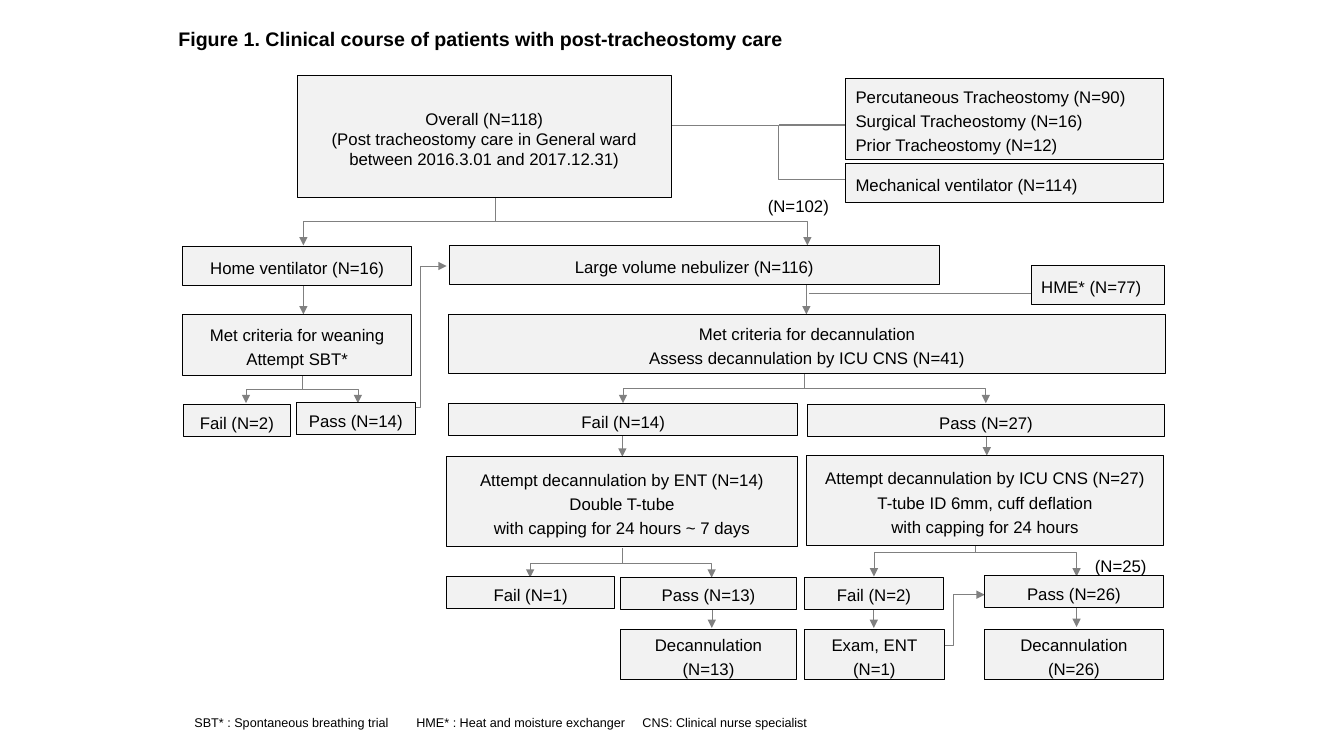
import pptx
import pptx.dml.color
import pptx.enum.shapes
import pptx.enum.text
import pptx.oxml
import pptx.oxml.ns
import pptx.util
from pptx.util import Pt

BLACK = pptx.dml.color.RGBColor(0x00, 0x00, 0x00)
GREY = pptx.dml.color.RGBColor(0x80, 0x80, 0x80)
PALE = pptx.dml.color.RGBColor(0xF2, 0xF2, 0xF2)
STRAIGHT = pptx.enum.shapes.MSO_CONNECTOR.STRAIGHT
ELBOW = pptx.enum.shapes.MSO_CONNECTOR.ELBOW
LEFT = pptx.enum.text.PP_ALIGN.LEFT
CENTER = pptx.enum.text.PP_ALIGN.CENTER
MIDDLE = pptx.enum.text.MSO_ANCHOR.MIDDLE
NAMESPACE = pptx.oxml.ns.nsdecls("a")

presentation = pptx.Presentation()
presentation.slide_width = Pt(960)
presentation.slide_height = Pt(540)
slide = presentation.slides.add_slide(presentation.slide_layouts[5])


def write_text(shape, text, align=LEFT, size=12, spacing=1.0, bold=False, side_inset=7.2):
    frame = shape.text_frame
    frame.text = text
    frame.word_wrap = True
    frame.vertical_anchor = MIDDLE
    frame.margin_left = frame.margin_right = Pt(side_inset)
    frame.margin_top = frame.margin_bottom = Pt(3.6)
    for paragraph in frame.paragraphs:
        paragraph.alignment = align
        paragraph.line_spacing = spacing
        paragraph.font.name = "Arial"
        paragraph.font.size = Pt(size)
        paragraph.font.bold = bold
        paragraph.font.color.rgb = BLACK


def add_line(kind, x1, y1, x2, y2, arrow=True, width=0.5):
    connector = slide.shapes.add_connector(kind, Pt(x1), Pt(y1), Pt(x2), Pt(y2))
    connector.line.color.rgb = GREY
    connector.line.width = Pt(width)
    properties = connector.element.spPr
    if arrow:
        outline = properties.find(pptx.oxml.ns.qn("a:ln"))
        outline.append(pptx.oxml.parse_xml(f'<a:tailEnd {NAMESPACE} type="triangle"/>'))
    properties.append(pptx.oxml.parse_xml(f"<a:effectLst {NAMESPACE}/>"))
    return connector


# Title
title = slide.shapes.title
title.left, title.top, title.width, title.height = Pt(120.2), Pt(15.1), Pt(640), Pt(24.5)
write_text(title, "Figure 1. Clinical course of patients with post-tracheostomy care", size=14, bold=True)
title.text_frame.auto_size = pptx.enum.text.MSO_AUTO_SIZE.NONE

# Side links: from, to, arrow
add_line(ELBOW, 478, 89.3, 634.3, 128.2, arrow=False)
add_line(STRAIGHT, 556.6, 89.3, 604, 89.3, arrow=False, width=0.75)
add_line(STRAIGHT, 578.2, 209.5, 736.6, 209.5, arrow=False, width=0.75)
add_line(ELBOW, 658.8, 460.8, 703.4, 424.8)
add_line(ELBOW, 281.5, 290.9, 319, 190.1)

# Straight steps down: x, top, bottom
for x, top, bottom in (
    (216.7, 204.5, 224.6),
    (576, 203.8, 224.6),
    (444.6, 311.8, 326.2),
    (704.9, 311, 325.4),
    (508.5, 434.2, 448.6),
    (624.2, 434.2, 448.6),
    (769, 433.4, 447.8),
):
    add_line(STRAIGHT, x, top, x, bottom)

# Forks: stem x, top, bottom, left x, right x
for stem, top, bottom, *targets in (
    (353.5, 140.4, 175.3, 216.7, 576.7),
    (216, 268, 288, 175.7, 255.6),
    (574.6, 267.1, 288, 445, 704.2),
    (444.2, 391.7, 412.6, 378.7, 508.3),
    (697, 377.3, 411.8, 624.2, 769),
):
    for target in targets:
        # The elbow lies on its side until it is turned about its centre.
        side = 1 if target > stem else -1
        center_x, center_y = (stem + target) / 2, (top + bottom) / 2
        half_drop = side * (bottom - top) / 2
        half_span = abs(target - stem) / 2
        connector = add_line(ELBOW, center_x + half_drop, center_y - half_span,
                             center_x - half_drop, center_y + half_span)
        connector.element.spPr.xfrm.set("rot", "16200000" if side > 0 else "5400000")

# Boxes: left, top, width, height, text, alignment, side inset
for left, top, width, height, text, align, inset in (
    (212.4, 54, 267.1, 87.1,
     "Overall (N=118)\n(Post tracheostomy care in General ward\nbetween 2016.3.01 and 2017.12.31)", CENTER, 7.2),
    (604, 56.2, 226.8, 57.4,
     "Percutaneous Tracheostomy (N=90)\nSurgical Tracheostomy (N=16)\nPrior Tracheostomy (N=12)", LEFT, 7.2),
    (604, 116.6, 226.8, 28.1, "Mechanical ventilator (N=114)", LEFT, 7.2),
    (130.5, 175.9, 163.6, 28.1, "Home ventilator (N=16)", CENTER, 7.2),
    (321, 175.2, 350, 28.1, "Large volume nebulizer (N=116)", CENTER, 7.2),
    (736.6, 189.4, 95, 28.1, "HME* (N=77)", LEFT, 7.2),
    (130.5, 224.6, 163.6, 43.7, "Met criteria for weaning\nAttempt SBT*", CENTER, 7.2),
    (320.4, 224.6, 512.3, 42.3,
     "Met criteria for decannulation\nAssess decannulation by ICU CNS (N=41)", CENTER, 7.2),
    (131, 288.9, 76.6, 22.7, "Fail (N=2)", CENTER, 7.2),
    (211.7, 287.8, 85, 22.7, "Pass (N=14)", CENTER, 7.2),
    (320.4, 288.5, 249.6, 22.7, "Fail (N=14)", CENTER, 7.2),
    (576.5, 288.9, 255.6, 22.7, "Pass (N=27)", CENTER, 7.2),
    (319, 326.2, 250.6, 64,
     "Attempt decannulation by ENT (N=14)\nDouble T-tube\nwith capping for 24 hours ~ 7 days", CENTER, 2.9),
    (576, 325.4, 255.4, 64,
     "Attempt decannulation by ICU CNS (N=27)\nT-tube ID 6mm, cuff deflation\nwith capping for 24 hours", CENTER, 0),
    (319, 411.8, 120.2, 22.7, "Fail (N=1)", CENTER, 7.2),
    (443.5, 412.4, 125.3, 22.7, "Pass (N=13)", CENTER, 7.2),
    (574.6, 412.4, 99.4, 22.7, "Fail (N=2)", CENTER, 7.2),
    (703.4, 411.1, 127.5, 22.7, "Pass (N=26)", CENTER, 7.2),
    (443.5, 449.8, 125.3, 35.3, "Decannulation (N=13)", CENTER, 7.2),
    (574.6, 449.8, 99.8, 35.3, "Exam, ENT (N=1)", CENTER, 7.2),
    (703.4, 449.8, 127.5, 35.3, "Decannulation (N=26)", CENTER, 7.2),
):
    box = slide.shapes.add_shape(pptx.enum.shapes.MSO_SHAPE.RECTANGLE, Pt(left), Pt(top), Pt(width), Pt(height))
    box.shadow.inherit = False
    box.fill.solid()
    box.fill.fore_color.rgb = PALE
    box.line.color.rgb = BLACK
    box.line.width = Pt(0.75)
    write_text(box, text, align, spacing=1.2, side_inset=inset)
    if text.startswith("Overall"):
        for paragraph in box.text_frame.paragraphs[1:]:
            paragraph.line_spacing = 1.0

# Loose labels and abbreviations: left, top, width, height, text, size
for left, top, width, height, text, size in (
    (541.4, 136.1, 60.5, 21.8, "(N=102)", 12),
    (775, 393.3, 52, 21.8, "(N=25)", 12),
    (131.8, 507, 499, 18.2,
     "SBT* : Spontaneous breathing trial\tHME* : Heat and moisture exchanger\tCNS: Clinical nurse specialist", 9),
):
    label = slide.shapes.add_textbox(Pt(left), Pt(top), Pt(width), Pt(height))
    write_text(label, text, size=size)

tab_stops = "".join(f'<a:tab pos="{Pt(position)}" algn="l"/>' for position in (158.5, 320))
abbreviations = label.text_frame.paragraphs[0]
# Tab stops come before the default run properties in the schema.
abbreviations.font.size = Pt(9)
abbreviations.line_spacing = 1.0
paragraph_properties = abbreviations._p.get_or_add_pPr()
paragraph_properties.find(pptx.oxml.ns.qn("a:defRPr")).addprevious(
    pptx.oxml.parse_xml(f"<a:tabLst {NAMESPACE}>{tab_stops}</a:tabLst>"))

presentation.save("out.pptx")
